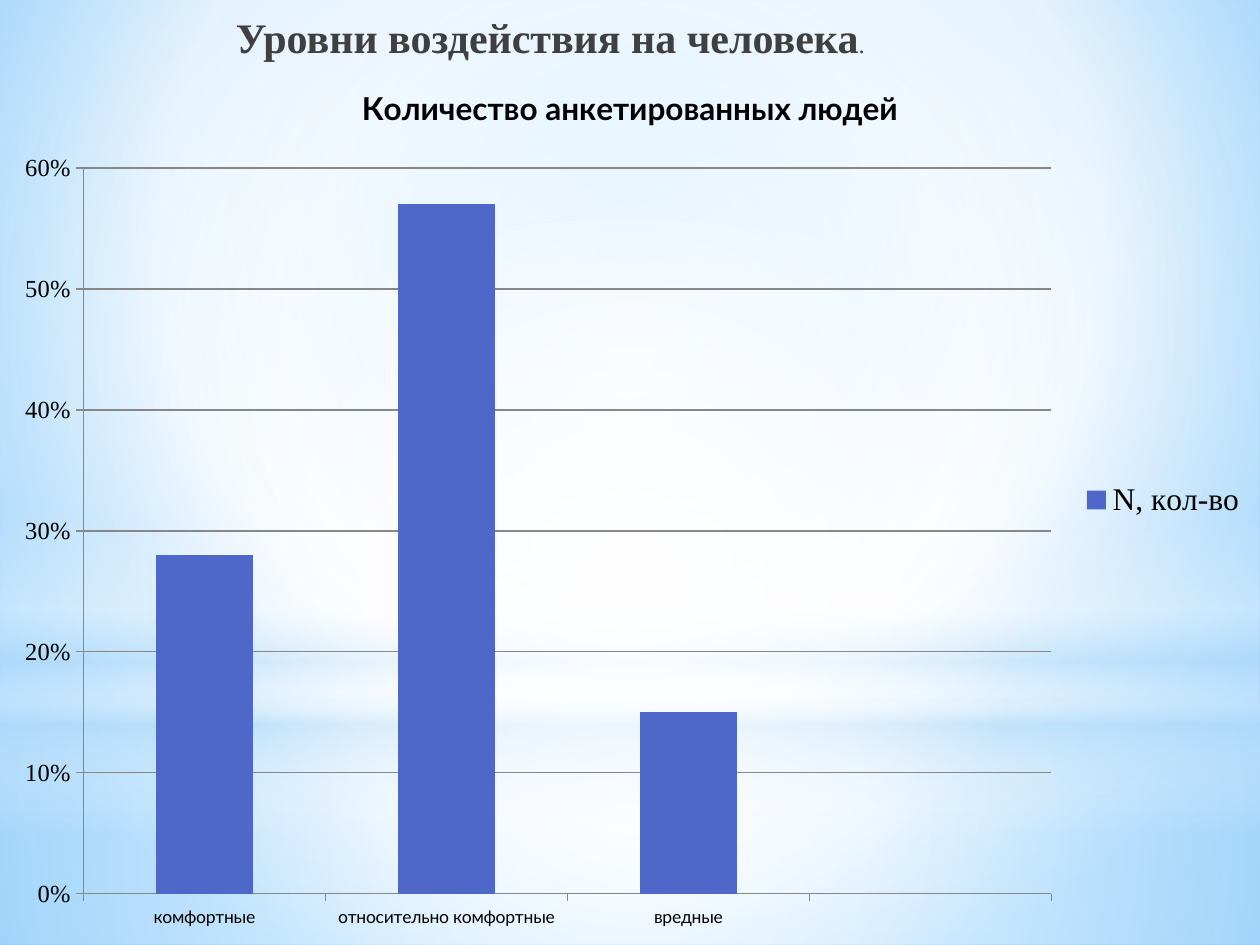
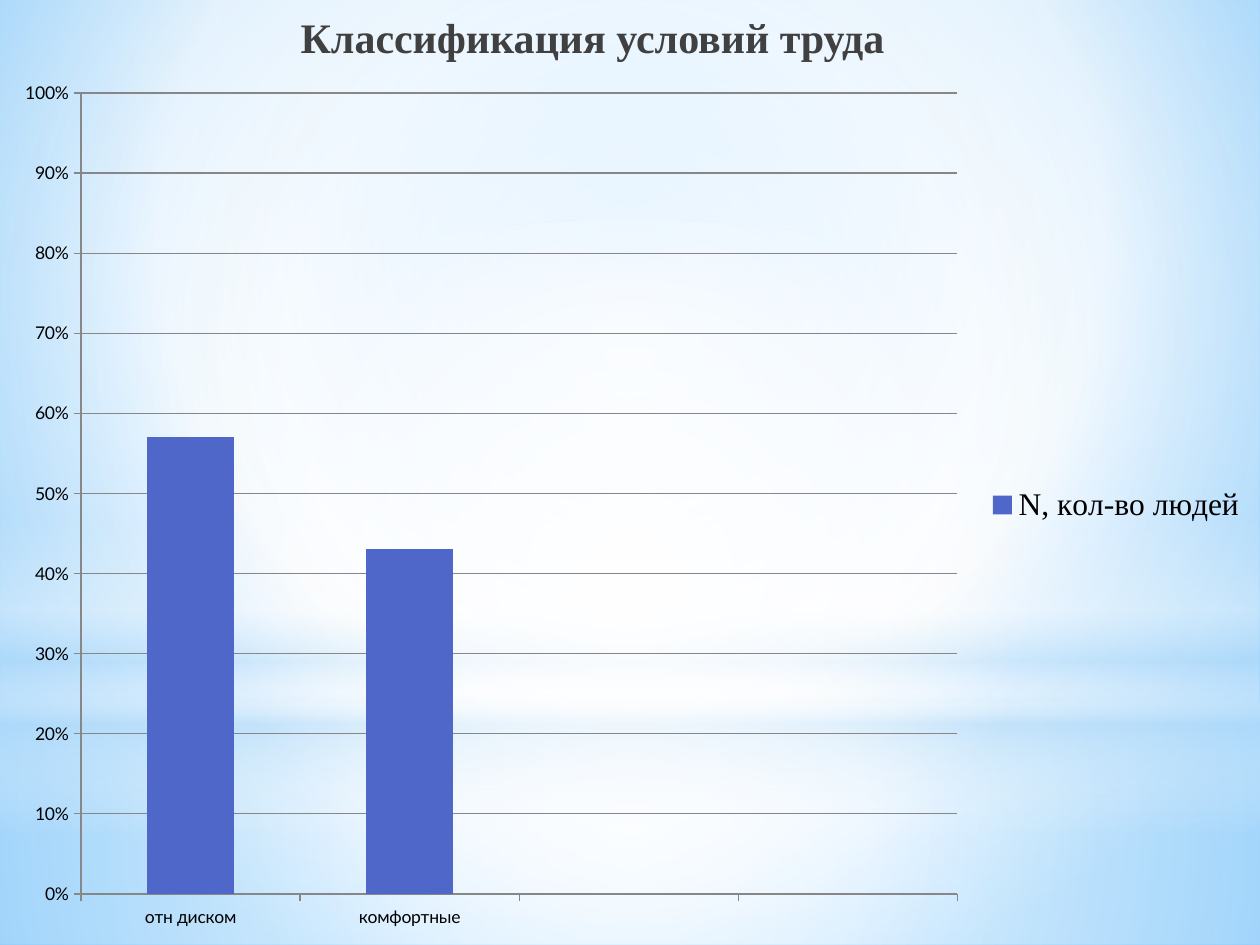
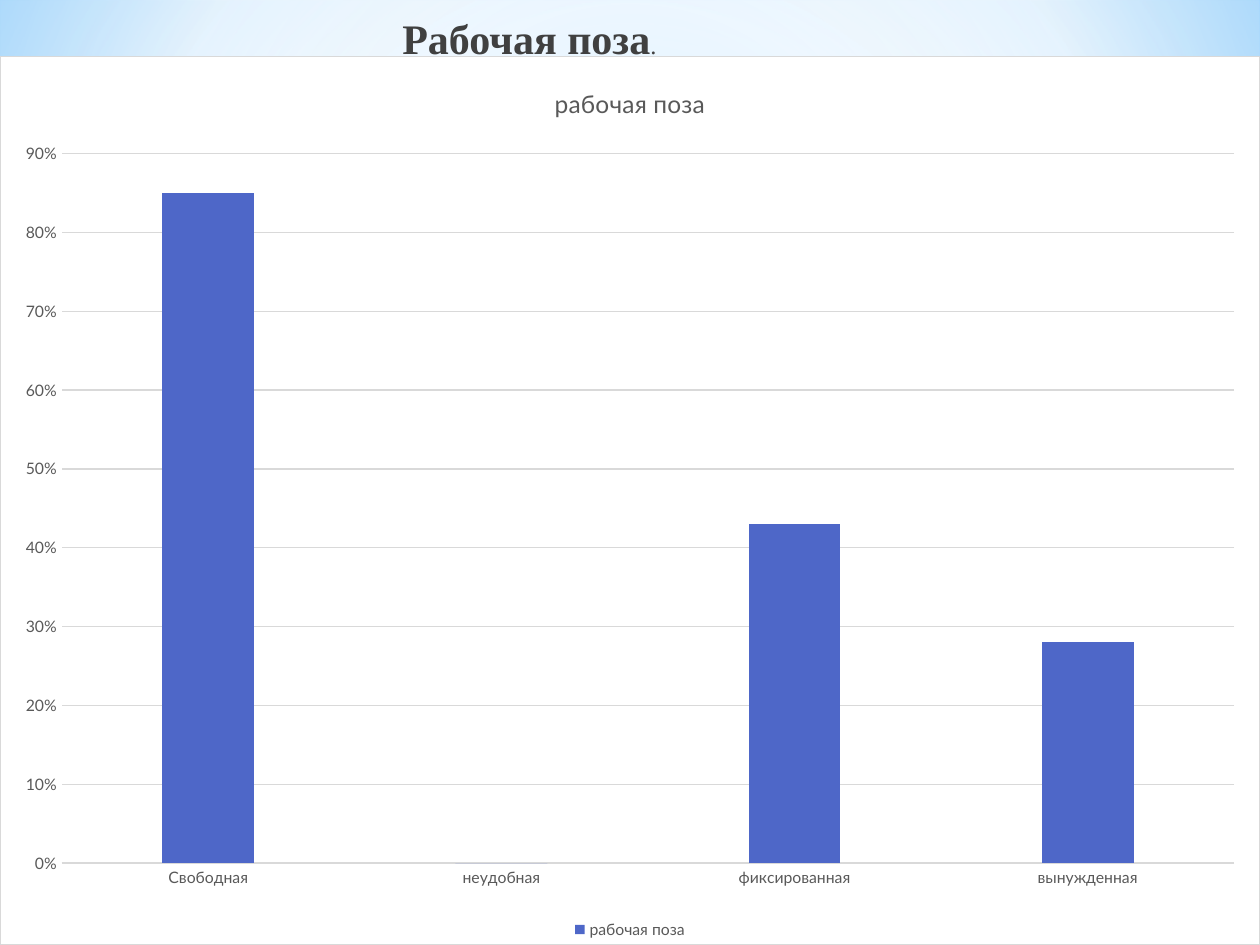
from lxml.etree import fromstring
from pptx import Presentation
from pptx.chart.data import CategoryChartData
from pptx.dml.color import RGBColor
from pptx.enum.chart import XL_CHART_TYPE, XL_LEGEND_POSITION, XL_TICK_MARK
from pptx.enum.shapes import MSO_SHAPE
from pptx.enum.text import MSO_ANCHOR, PP_ALIGN
from pptx.oxml.ns import nsdecls, qn
from pptx.util import Emu, Pt

PX = 914400 / 126
SERIF, SANS = "Times New Roman", "Lato"
BLACK, WHITE, GRAY, TITLE_GRAY = "000000", "FFFFFF", "595959", "404040"
AXIS_GRAY, PALE_GRAY, BAR_BLUE, SKY = "878787", "D9D9D9", "4E67C8", "B4DCFA"
CENTER = 'l="50000" t="50000" r="50000" b="50000"'


def color(value):
    return RGBColor.from_string(value)


def apply_gradient(element, stops, focus):
    stop_xml = "".join(
        f'<a:gs pos="{position * 1000}"><a:srgbClr val="{tint}">'
        f'<a:alpha val="{alpha * 1000}"/></a:srgbClr></a:gs>'
        for position, tint, alpha in stops)
    shade = f'<a:path path="circle"><a:fillToRect {focus}/></a:path>' if focus else '<a:lin ang="5400000" scaled="0"/>'
    gradient = fromstring(
        f'<a:gradFill rotWithShape="1" {nsdecls("a")}><a:gsLst>{stop_xml}</a:gsLst>{shade}</a:gradFill>')
    solid = next(element.iter(qn("a:solidFill")))
    solid.getparent().replace(solid, gradient)


prs = Presentation()
prs.slide_width, prs.slide_height = Emu(int(1260 * PX)), Emu(int(945 * PX))
blank = prs.slide_layouts[6]
master = prs.slide_master
slides = [prs.slides.add_slide(blank) for _ in range(3)]

master.background.fill.solid()
master.background.fill.fore_color.rgb = color(WHITE)
apply_gradient(master.element, [(0, "9ED5FF", 100), (60, WHITE, 100), (100, "5BB9FF", 100)],
               'l="20000" t="10000" r="20000" b="60000"')

sky_layers = [
    (MSO_SHAPE.RECTANGLE, 703, 242, [(0, WHITE, 91), (37, WHITE, 76), (100, SKY, 79)], CENTER),
    (MSO_SHAPE.RECTANGLE, 0, 703, [(0, WHITE, 89), (48, WHITE, 62), (100, SKY, 79)], CENTER),
    (MSO_SHAPE.RECTANGLE, 519, 315, [(0, WHITE, 0), (29, WHITE, 30), (45, SKY, 40),
                                     (55, WHITE, 26), (65, SKY, 60), (100, WHITE, 0)], None),
    (MSO_SHAPE.OVAL, 220, 703, [(0, WHITE, 100), (56, WHITE, 0)], CENTER),
]
for outline, top, height, stops, focus in sky_layers:
    layer = slides[0].shapes.add_shape(outline, 0, int(top * PX), prs.slide_width, int(height * PX))
    layer.shadow.inherit = False
    layer.fill.solid()
    layer.fill.fore_color.rgb = color(WHITE)
    layer.line.fill.background()
    apply_gradient(layer.element, stops, focus)
    master.shapes.element.append(layer.element)

plain = dict(heading=None, text=BLACK, category_size=10, value_font=(SANS, 10), legend_font=(SERIF, 18),
             legend_at=XL_LEGEND_POSITION.RIGHT, tick=XL_TICK_MARK.OUTSIDE, axis=AXIS_GRAY, grid=AXIS_GRAY,
             gap=150, overlap=0, panel=False)
surveys = [
    plain | dict(
        title=["Уровни воздействия на человека", ". "], title_at=(105, 0), chart_top=55,
        heading=("Количество анкетированных людей", 18, True), value_font=(SERIF, 14), maximum=0.6,
        categories=["комфортные", "относительно комфортные", "вредные", ""],
        series="N, кол-во", values=[0.28, 0.57, 0.15, None]),
    plain | dict(
        title=["Классификация условий труда"], title_at=(144, 0), chart_top=65, maximum=1,
        categories=["отн диском", "комфортные", "", ""],
        series="N, кол-во людей", values=[0.57, 0.43, None, None]),
    plain | dict(
        title=["Рабочая поза", ". "], title_at=(84, 1), chart_top=56,
        heading=("рабочая поза", 14, False), text=GRAY, category_size=9, value_font=(SANS, 9),
        legend_font=(SANS, 9), legend_at=XL_LEGEND_POSITION.BOTTOM, tick=XL_TICK_MARK.NONE,
        axis=PALE_GRAY, grid=PALE_GRAY, gap=219, overlap=-27, panel=True, maximum=0.9,
        categories=["Свободная", "неудобная", "фиксированная", "вынужденная"],
        series="рабочая поза", values=[0.85, 0, 0.43, 0.28]),
]

for slide, survey in zip(slides, surveys):
    left, top = survey["title_at"]
    title = slide.shapes.add_textbox(int(left * PX), int(top * PX), int(897 * PX), int(158 * PX))
    title_frame = title.text_frame
    title_frame.word_wrap = True
    title_frame.vertical_anchor = MSO_ANCHOR.TOP
    title_frame.margin_top = int(11 * PX)
    title_line = title_frame.paragraphs[0]
    title_line.alignment = PP_ALIGN.CENTER
    for words, size, bold in zip(survey["title"], (24, 14), (True, False)):
        run = title_line.add_run()
        run.text = words
        run.font.name, run.font.size, run.font.bold = SERIF, Pt(size), bold
        run.font.color.rgb = color(TITLE_GRAY)

    data = CategoryChartData(number_format="0%")
    data.categories = survey["categories"]
    data.add_series(survey["series"], survey["values"])
    chart_top = int(survey["chart_top"] * PX)
    chart = slide.shapes.add_chart(XL_CHART_TYPE.COLUMN_CLUSTERED, 0, chart_top, prs.slide_width,
                                   prs.slide_height - chart_top, data).chart
    chart.font.name, chart.font.size = SANS, Pt(10)
    chart.font.color.rgb = color(survey["text"])

    chart.has_title = survey["heading"] is not None
    if chart.has_title:
        heading, size, bold = survey["heading"]
        chart.chart_title.text_frame.text = heading
        heading_font = chart.chart_title.text_frame.paragraphs[0].runs[0].font
        heading_font.name, heading_font.size, heading_font.bold = SANS, Pt(size), bold
        heading_font.color.rgb = color(survey["text"])
        chart.chart_title.include_in_layout = False

    chart.has_legend = True
    chart.legend.position = survey["legend_at"]
    chart.legend.include_in_layout = False

    plot = chart.plots[0]
    plot.gap_width, plot.overlap, plot.vary_by_categories = survey["gap"], survey["overlap"], False
    bars = plot.series[0]
    bars.format.fill.solid()
    bars.format.fill.fore_color.rgb = color(BAR_BLUE)
    bars.invert_if_negative = False

    categories, scale = chart.category_axis, chart.value_axis
    scale.minimum_scale, scale.maximum_scale, scale.major_unit = 0, survey["maximum"], 0.1
    scale.tick_labels.number_format = "0%"
    scale.tick_labels.number_format_is_linked = False
    scale.has_major_gridlines = True
    for part in (categories, scale):
        part.major_tick_mark, part.minor_tick_mark = survey["tick"], XL_TICK_MARK.NONE
    for line, tint in ((categories.format.line, survey["axis"]), (scale.format.line, survey["axis"]),
                       (scale.major_gridlines.format.line, survey["grid"])):
        line.color.rgb = color(tint)
        line.width = Pt(0.75)
    for font, (face, size) in ((categories.tick_labels.font, (SANS, survey["category_size"])),
                               (scale.tick_labels.font, survey["value_font"]),
                               (chart.legend.font, survey["legend_font"])):
        font.name, font.size = face, Pt(size)
        font.color.rgb = color(survey["text"])

    if survey["panel"]:
        scale.format.line.fill.background()
    panel_fill, panel_line = [
        f'<a:solidFill><a:srgbClr val="{tint}"/></a:solidFill>' if survey["panel"] else "<a:noFill/>"
        for tint in (WHITE, PALE_GRAY)]
    panel = fromstring(f'<c:spPr {nsdecls("c", "a")}>{panel_fill}<a:ln w="9525">{panel_line}</a:ln></c:spPr>')
    next(chart.element.iter(qn("c:chart"))).addnext(panel)

prs.save("out.pptx")
